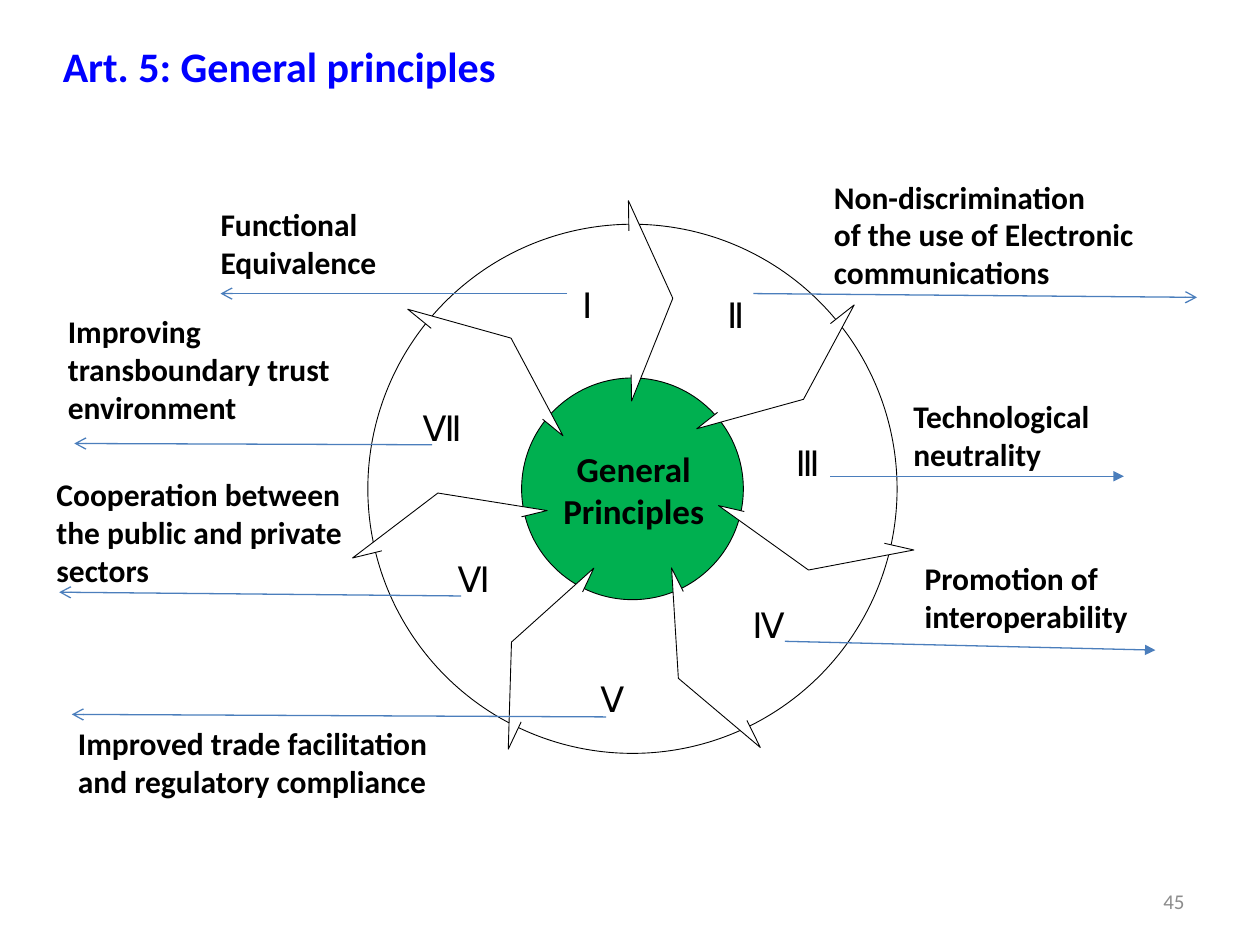
from lxml import etree
from pptx import Presentation
from pptx.dml.color import RGBColor
from pptx.enum.shapes import MSO_CONNECTOR, MSO_SHAPE
from pptx.enum.text import MSO_ANCHOR, MSO_AUTO_SIZE, PP_ALIGN
from pptx.oxml.ns import qn
from pptx.util import Inches, Pt

ARC, OVAL = MSO_SHAPE.ARC, MSO_SHAPE.OVAL
STRAIGHT = MSO_CONNECTOR.STRAIGHT
TOP, MIDDLE = MSO_ANCHOR.TOP, MSO_ANCHOR.MIDDLE
LEFT, CENTER, RIGHT = PP_ALIGN.LEFT, PP_ALIGN.CENTER, PP_ALIGN.RIGHT
GROW, FIXED = MSO_AUTO_SIZE.SHAPE_TO_FIT_TEXT, MSO_AUTO_SIZE.NONE

FONT = "Calibri"
BLACK, WHITE, GREEN = "000000", "FFFFFF", "00B050"
BLUE, ARROW_BLUE, GRAY = "0000FF", "4B7EBC", "8C8C8C"

CENTER_X, CENTER_Y = 5.02, 3.88
WHEEL_RADIUS, HUB_RADIUS = 2.1, 0.88
SEGMENT_COUNT = 7

BLADE_POINTS = [(0.34, 0.21), (0.34, 0), (0, 0.81), (0.34, 1.59), (0.34, 1.35)]
# left, top, rotation
BLADES = [
    (6.09, 2.25, 231.8),
    (6.27, 3.56, 282.8),
    (5.36, 4.5, 333.7),
    (4.05, 4.36, 25.3),
    (3.36, 3.28, 76.3),
    (3.79, 2.03, 129.2),
    (5, 1.59, 179.1),
]
# numeral, left, top
NUMERALS = [
    ("Ⅰ", 4.17, 2.25),
    ("Ⅱ", 5.35, 2.33),
    ("Ⅲ", 5.92, 3.5),
    ("Ⅳ", 5.61, 4.79),
    ("Ⅴ", 4.37, 5.37),
    ("Ⅵ", 3.27, 4.42),
    ("Ⅶ", 3.02, 3.22),
]
# text, text box, arrow start and end, arrowhead, further text format
PRINCIPLES = [
    ("Functional Equivalence", (1.75, 1.62, 1.78, 0.61),
     (4.5, 2.33, 1.75, 2.33), "arrow", {"anchor": MIDDLE, "inset": False}),
    ("Non-discrimination\nof the use of Electronic communications",
     (6.52, 1.36, 3.14, 1.01), (5.98, 2.33, 9.5, 2.36), "arrow", {}),
    ("Technological\nneutrality", (7.15, 3.1, 1.95, 0.71),
     (6.59, 3.78, 8.92, 3.78), "triangle", {"wrap": False}),
    ("Promotion of\ninteroperability", (7.24, 4.39, 2.03, 0.71),
     (6.23, 5.09, 9.17, 5.16), "triangle", {"wrap": False}),
    ("Improving\ntransboundary trust environment", (0.44, 2.43, 3.25, 1.01),
     (3.43, 3.53, 0.59, 3.52), "arrow", {}),
    ("Cooperation between the public and private sectors",
     (0.35, 3.72, 2.5, 1.01), (3.66, 4.73, 0.47, 4.7), "arrow", {}),
    ("Improved trade facilitation and regulatory compliance",
     (0.52, 5.7, 3.41, 0.71), (4.81, 5.69, 0.57, 5.67), "arrow", {}),
]


def color(hex_string):
    return RGBColor.from_string(hex_string)


def style_shape(shape, fill):
    shape.shadow.inherit = False
    shape.fill.solid()
    shape.fill.fore_color.rgb = color(fill)
    shape.line.color.rgb = color(BLACK)
    shape.line.width = Pt(0.5)


def add_text(slide, text, box, *, size=18, bold=False, fill=BLACK, align=LEFT,
             anchor=TOP, inset=True, wrap=True, fit=GROW):
    shape = slide.shapes.add_textbox(*map(Inches, box))
    frame = shape.text_frame
    frame.word_wrap = wrap
    frame.auto_size = fit
    frame.vertical_anchor = anchor
    if not inset:
        frame.margin_left = frame.margin_right = 0
        frame.margin_top = frame.margin_bottom = 0
    frame.text = text
    for paragraph in frame.paragraphs:
        paragraph.alignment = align
        for run in paragraph.runs:
            run.font.name = FONT
            run.font.size = Pt(size)
            run.font.bold = bold
            run.font.color.rgb = color(fill)


def add_circle_part(slide, kind, radius, fill):
    """Add a shape whose frame encloses a circle around the wheel's centre."""
    shape = slide.shapes.add_shape(
        kind, Inches(CENTER_X - radius), Inches(CENTER_Y - radius),
        Inches(2 * radius), Inches(2 * radius))
    style_shape(shape, fill)
    return shape


def add_segment(slide, index):
    step = 360 / SEGMENT_COUNT
    segment = add_circle_part(slide, ARC, WHEEL_RADIUS, WHITE)
    for position in range(2):
        angle = (270 + (index + position) * step) % 360
        # Adjustments count in 100000ths, angles in 60000ths of a degree.
        segment.adjustments[position] = angle * 0.6


def add_blade(slide, left, top, rotation):
    points = [(Inches(x), Inches(y)) for x, y in BLADE_POINTS]
    builder = slide.shapes.build_freeform(*points[0])
    builder.add_line_segments(points[1:], close=False)
    blade = builder.convert_to_shape(Inches(left), Inches(top))
    blade.rotation = rotation
    style_shape(blade, WHITE)


def add_arrow(slide, ends, head):
    connector = slide.shapes.add_connector(STRAIGHT, *map(Inches, ends))
    connector.line.color.rgb = color(ARROW_BLUE)
    connector.line.width = Pt(0.75)
    line = connector.line._get_or_add_ln()
    etree.SubElement(line, qn("a:tailEnd"), type=head)
    etree.SubElement(connector._element.spPr, qn("a:effectLst"))


def add_wheel(slide):
    for index in range(SEGMENT_COUNT):
        add_segment(slide, index)
    add_circle_part(slide, OVAL, HUB_RADIUS, GREEN)
    for blade in BLADES:
        add_blade(slide, *blade)
    add_text(slide, "General\nPrinciples", (4.33, 3.55, 1.4, 0.67), size=20,
             bold=True, align=CENTER, anchor=MIDDLE, inset=False)
    for numeral, left, top in NUMERALS:
        add_text(slide, numeral, (left, top, 0.98, 0.34), size=20,
                 align=CENTER, anchor=MIDDLE, inset=False)


def main():
    presentation = Presentation()
    presentation.slide_width = Inches(10)
    presentation.slide_height = Inches(7.5)
    slide = presentation.slides.add_slide(presentation.slide_layouts[6])

    add_text(slide, "45", (7.17, 6.95, 2.33, 0.4), size=12, fill=GRAY,
             align=RIGHT, anchor=MIDDLE, fit=FIXED)
    add_wheel(slide)
    add_text(slide, "Art. 5: General principles", (0.4, 0.27, 4.62, 0.5),
             size=24, bold=True, fill=BLUE)
    for text, box, ends, head, text_format in PRINCIPLES:
        add_arrow(slide, ends, head)
        add_text(slide, text, box, bold=True, **text_format)

    presentation.save("out.pptx")


if __name__ == "__main__":
    main()
